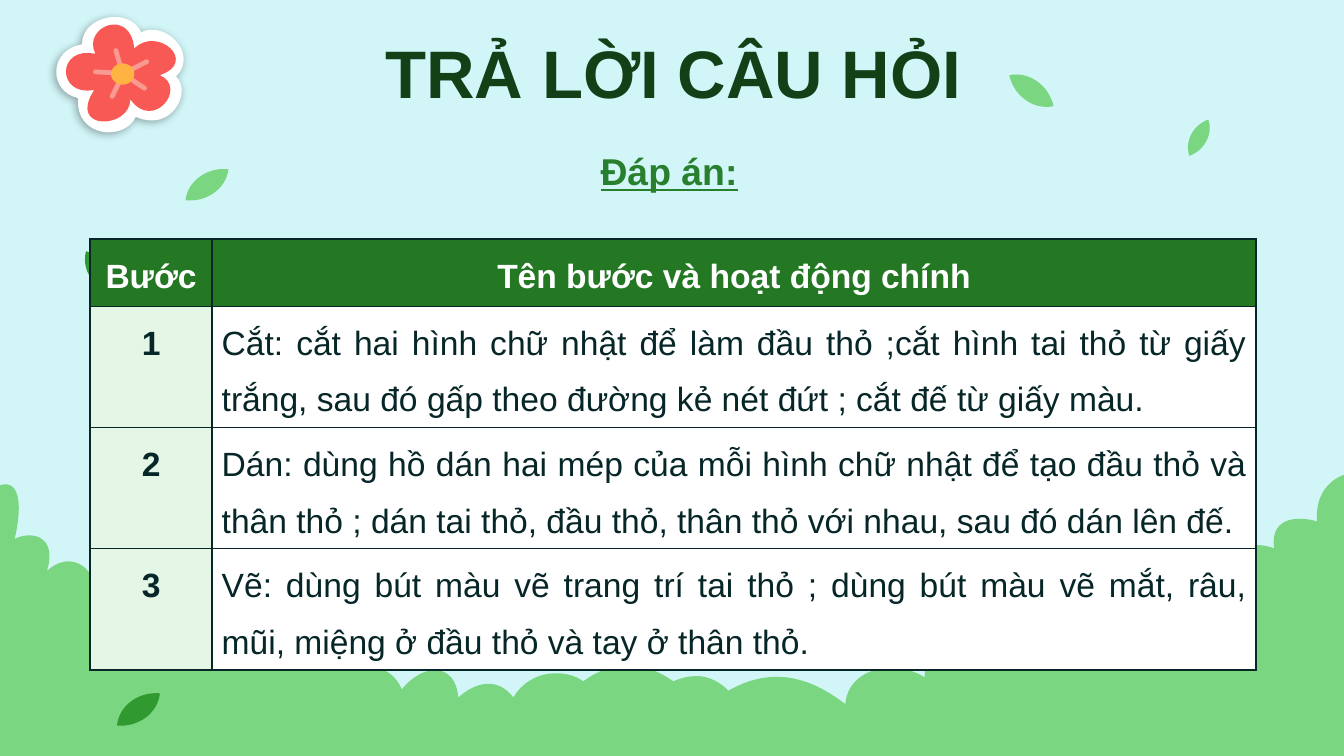
"""Builds the answer slide: three steps for making a paper rabbit, in a garden setting."""
from lxml import etree
from pptx import Presentation
from pptx import util as u
from pptx.dml.color import RGBColor
from pptx.enum import shapes, text
from pptx.oxml import ns

rgb = RGBColor.from_string
INCH = u.Cm(2.54)
ALIGN = text.PP_ALIGN


def outline(colour, start, bumps, corners=()):
    """Draw a filled outline of cubic curves, each given as two controls and an end."""
    points, (x0, y0) = [], start
    for x1, y1, x2, y2, x3, y3 in bumps:
        for step in range(1, 17):
            t = step / 16
            a, b, c, d = (1 - t) ** 3, 3 * t * (1 - t) ** 2, 3 * t * t * (1 - t), t ** 3
            points.append((a * x0 + b * x1 + c * x2 + d * x3, a * y0 + b * y1 + c * y2 + d * y3))
        x0, y0 = x3, y3
    points.extend(corners)
    builder = slide.shapes.build_freeform(start[0] * INCH, start[1] * INCH)
    builder.add_line_segments([(x * INCH, y * INCH) for x, y in points])
    figure = builder.convert_to_shape()
    figure.fill.solid()
    figure.fill.fore_color.rgb = rgb(colour)
    figure.line.fill.background()
    figure.shadow.inherit = False
    return figure


def write(frame, words, size, colour, bold=True, underline=False, align=ALIGN.CENTER,
          spacing=1.0, after=0):
    """Put one formatted paragraph into a text frame."""
    paragraph = frame.paragraphs[0]
    paragraph.alignment = align
    paragraph.line_spacing = spacing
    paragraph.space_after = u.Pt(after)
    run = paragraph.add_run()
    run.text = words
    run.font.name = "Arial"
    run.font.size = u.Pt(size)
    run.font.bold = bold
    run.font.underline = underline
    run.font.color.rgb = rgb(colour)


deck = Presentation()
deck.slide_width, deck.slide_height = u.Cm(25.4), u.Cm(14.29)
slide = deck.slides.add_slide(deck.slide_layouts[5])
slide.background.fill.solid()
slide.background.fill.fore_color.rgb = rgb("D2F6F8")

outline("7AD681", (-0.04, 3.63), [
    (0.1, 3.55, 0.19, 3.65, 0.11, 4.01), (0.23, 3.95, 0.43, 3.98, 0.35, 4.25),
    (0.5, 4.1, 0.72, 4.19, 0.72, 4.46), (0.9, 4.47, 0.99, 4.56, 0.99, 4.76),
    (1.18, 4.67, 1.39, 4.68, 1.56, 4.8), (1.7, 4.58, 2.13, 4.47, 2.22, 4.8),
    (2.38, 4.75, 2.61, 4.71, 2.57, 4.99), (2.72, 4.94, 2.91, 4.94, 2.99, 5.13),
    (3.15, 4.93, 3.39, 4.93, 3.41, 5.19), (3.57, 5.05, 3.72, 5.06, 3.82, 5.19),
    (3.95, 4.97, 4.22, 4.98, 4.34, 5.07), (4.56, 4.91, 4.78, 4.91, 5.01, 5.07),
    (5.15, 5.01, 5.29, 5.01, 5.42, 5.14), (5.7, 4.98, 5.98, 5, 6.29, 5.24),
    (6.31, 4.97, 6.66, 4.9, 6.88, 5.04), (6.88, 4.66, 7.2, 4.57, 7.38, 4.74),
    (7.52, 4.58, 7.8, 4.58, 7.95, 4.75), (8.06, 4.47, 8.3, 4.4, 8.53, 4.45),
    (8.48, 4.08, 8.9, 4.05, 9.15, 4.16), (9.25, 4.04, 9.36, 4.04, 9.48, 4.08),
    (9.45, 3.87, 9.62, 3.83, 9.8, 3.88), (9.78, 3.65, 9.93, 3.54, 10.05, 3.52),
], [(10.05, 7.03), (-0.04, 7.03)])

for colour, (x, y), (tip_x, tip_y) in [
    ("7AD681", (8.85, 1.16), (8.99, 0.89)), ("309930", (0.78, 2.14), (0.64, 1.87)),
    ("7AD681", (1.38, 1.49), (1.7, 1.26)), ("7AD681", (7.84, 0.79), (7.51, 0.56)),
    ("309930", (0.87, 5.4), (1.19, 5.16)),
]:
    dx, dy = tip_x - x, tip_y - y
    left_near, left_far, right_far, right_near = [
        (x + along * dx + side * dy, y + along * dy - side * dx)
        for along, side in [(0.25, 0.27), (0.7, 0.27), (0.75, -0.27), (0.3, -0.27)]]
    outline(colour, (x, y), [(*left_near, *left_far, tip_x, tip_y),
                             (*right_far, *right_near, x, y)])

flower_rim = outline("FFFFFF", (0.61, 0.33), [
    (0.61, 0.11, 0.97, 0.05, 1.05, 0.24), (1.23, 0.15, 1.48, 0.4, 1.31, 0.57),
    (1.43, 0.68, 1.28, 0.99, 1.01, 0.87), (0.93, 1.05, 0.56, 1.03, 0.58, 0.73),
    (0.36, 0.68, 0.36, 0.37, 0.61, 0.33)])
effects = flower_rim._element.spPr.find(ns.qn("a:effectLst"))
rim_shadow = etree.SubElement(effects, ns.qn("a:outerShdw"), blurRad=str(u.Pt(4.5)),
                              dist=str(u.Pt(1.5)), dir="8220000", algn="bl", rotWithShape="0")
shadow_colour = etree.SubElement(rim_shadow, ns.qn("a:srgbClr"), val="000000")
etree.SubElement(shadow_colour, ns.qn("a:alpha"), val="33000")

outline("F95955", (0.71, 0.4), [
    (0.61, 0.2, 0.97, 0.05, 1, 0.36), (1.17, 0.19, 1.48, 0.46, 1.19, 0.56),
    (1.4, 0.65, 1.14, 0.98, 0.97, 0.74), (0.97, 0.96, 0.5, 0.98, 0.7, 0.67),
    (0.42, 0.72, 0.42, 0.34, 0.71, 0.4)])

STAMEN, HEART = shapes.MSO_SHAPE.ROUNDED_RECTANGLE, shapes.MSO_SHAPE.OVAL
for kind, colour, x, y, width, height, turn in [
    (STAMEN, "F99A91", 2.24, 1.13, 0.45, 0.09, 74), (STAMEN, "F99A91", 2.01, 1.37, 0.5, 0.09, 3),
    (STAMEN, "F99A91", 2.59, 1.26, 0.5, 0.09, -27), (STAMEN, "F99A91", 2.57, 1.56, 0.48, 0.09, 34),
    (STAMEN, "F99A91", 2.2, 1.66, 0.45, 0.09, -64), (HEART, "FEB343", 2.32, 1.4, 0.44, 0.4, 0),
]:
    part = slide.shapes.add_shape(kind, u.Cm(x - width / 2), u.Cm(y - height / 2),
                                  u.Cm(width), u.Cm(height))
    if kind == STAMEN:
        part.adjustments[0] = 0.5
    part.rotation = turn
    part.fill.solid()
    part.fill.fore_color.rgb = rgb(colour)
    part.line.fill.background()
    part.shadow.inherit = False

title = slide.shapes.title
title.left, title.top, title.width, title.height = u.Cm(4.5), u.Cm(0.18), u.Cm(16.46), u.Cm(2.34)
title.text_frame.vertical_anchor = text.MSO_ANCHOR.MIDDLE
write(title.text_frame, "TRẢ LỜI CÂU HỎI", 36, "144017")

answer = slide.shapes.add_textbox(u.Cm(11.1), u.Cm(2.26), u.Cm(3.28), u.Cm(1.37))
answer.text_frame.word_wrap = True
write(answer.text_frame, "Đáp án:", 20, "28802E", underline=True, align=ALIGN.JUSTIFY,
      spacing=1.5, after=8)

rows = [
    ("Bước", "Tên bước và hoạt động chính"),
    ("1", "Cắt: cắt hai hình chữ nhật để làm đầu thỏ ;cắt hình tai thỏ từ giấy trắng, "
          "sau đó gấp theo đường kẻ nét đứt ; cắt đế từ giấy màu."),
    ("2", "Dán: dùng hồ dán hai mép của mỗi hình chữ nhật để tạo đầu thỏ và thân thỏ ; "
          "dán tai thỏ, đầu thỏ, thân thỏ với nhau, sau đó dán lên đế."),
    ("3", "Vẽ: dùng bút màu vẽ trang trí tai thỏ ; dùng bút màu vẽ mắt, râu, mũi, "
          "miệng ở đầu thỏ và tay ở thân thỏ."),
]
steps = slide.shapes.add_table(len(rows), 2, u.Cm(1.7), u.Cm(4.52), u.Cm(22.04), u.Cm(8.13)).table
steps.horz_banding = False
steps.columns[0].width, steps.columns[1].width = u.Cm(2.31), u.Cm(19.73)
for r, row in enumerate(rows):
    steps.rows[r].height = u.Cm(2.29 if r else 1.27)
    for c, words in enumerate(row):
        cell = steps.cell(r, c)
        cell.margin_left = cell.margin_right = u.Cm(0.18)
        cell.margin_top = cell.margin_bottom = 0
        for edge in ("a:lnL", "a:lnR", "a:lnT", "a:lnB"):
            border = etree.SubElement(cell._tc.get_or_add_tcPr(), ns.qn(edge), w=str(u.Pt(1)))
            ink = etree.SubElement(border, ns.qn("a:solidFill"))
            etree.SubElement(ink, ns.qn("a:srgbClr"), val="062628")
        cell.fill.solid()
        cell.fill.fore_color.rgb = rgb("247824" if r == 0 else ("E4F7E6", "FFFFFF")[c])
        detail = r > 0 and c == 1
        write(cell.text_frame, words, 18, "062628" if r else "FFFFFF", bold=not detail,
              align=ALIGN.JUSTIFY if detail else ALIGN.CENTER, spacing=1.5)

deck.save("out.pptx")
